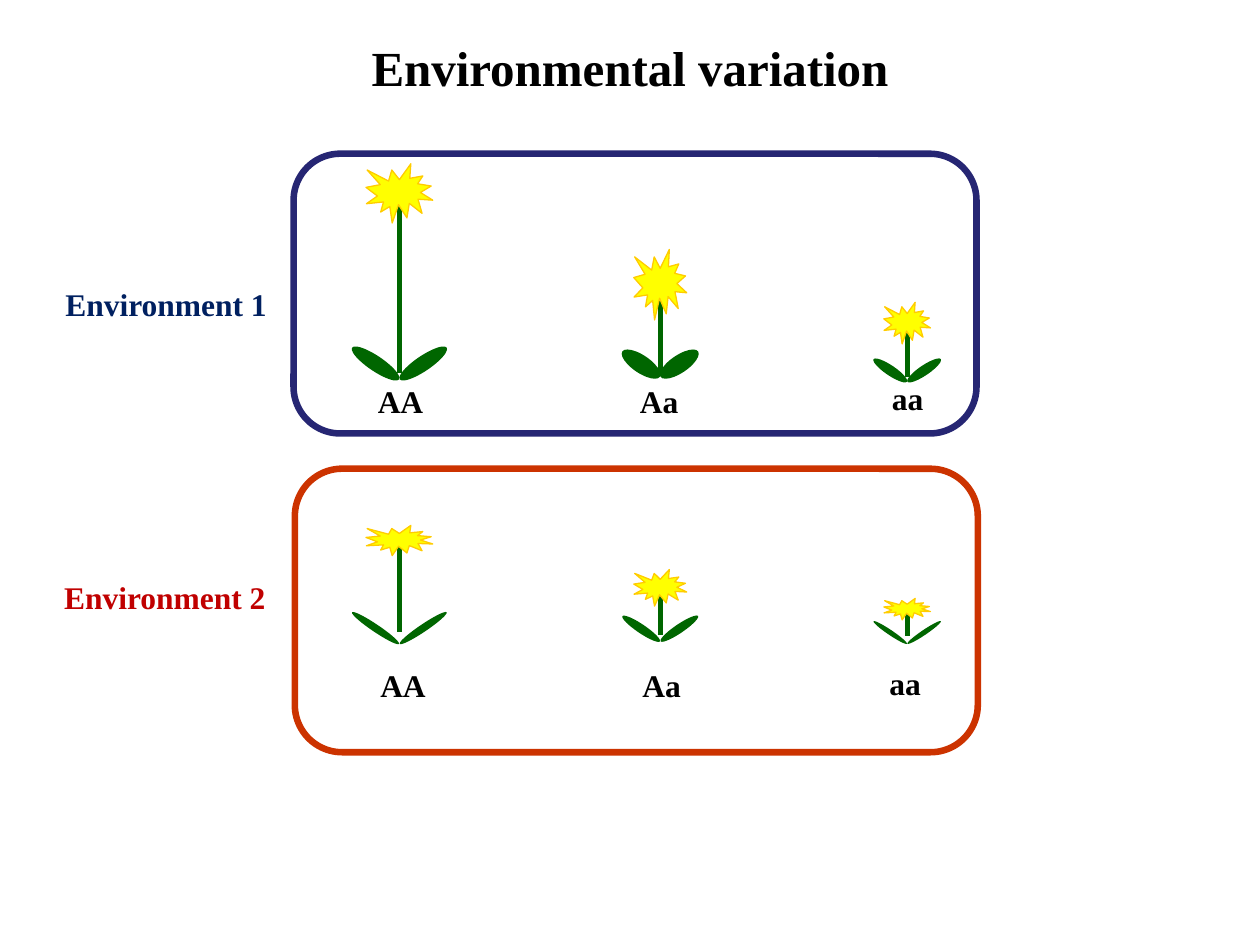
from dataclasses import dataclass

import pptx
import pptx.dml.color
import pptx.enum.shapes
import pptx.enum.text
import pptx.oxml.ns
import pptx.util
from lxml import etree
from pptx.util import Inches

FONT = "Times New Roman"
BLACK = "000000"
GREEN = "006600"
LEAF_TILT = 56
LEAF_SPREAD = 0.42  # offset of a leaf's centre from the stem, per leaf length
Shape = pptx.enum.shapes.MSO_SHAPE


@dataclass
class Flower:
    center: float
    bloom_top: float
    bloom_width: float
    bloom_height: float
    stem_top: float
    stem_bottom: float
    leaf_top: float
    leaf_width: float
    leaf_length: float


@dataclass
class Label:
    text: str
    left: float
    top: float
    width: float
    color: str = BLACK


@dataclass
class Environment:
    label: Label
    frame: tuple[float, float, float, float]
    frame_color: str
    flowers: list[Flower]
    genotypes: list[Label]


ENVIRONMENTS = [
    Environment(
        Label("Environment 1", 0.42, 2.21, 1.82, "002060"),
        (2.33, 1.22, 5.42, 2.22), "262673",
        [
            Flower(3.17, 1.3, 0.53, 0.47, 1.58, 2.96, 2.66, 0.12, 0.45),
            Flower(7.2, 2.4, 0.37, 0.33, 2.61, 2.99, 2.78, 0.08, 0.32),
            Flower(5.24, 1.98, 0.42, 0.56, 2.34, 2.98, 2.71, 0.14, 0.36),
        ],
        [
            Label("AA", 2.9, 2.98, 0.57),
            Label("Aa", 4.98, 2.98, 0.51),
            Label("aa", 6.98, 2.96, 0.45),
        ],
    ),
    Environment(
        Label("Environment 2", 0.41, 4.54, 1.82, "C00000"),
        (2.34, 3.72, 5.42, 2.25), "CC3300",
        [
            Flower(3.17, 4.17, 0.53, 0.24, 4.31, 5.02, 4.76, 0.06, 0.45),
            Flower(7.2, 4.75, 0.37, 0.17, 4.86, 5.05, 4.86, 0.04, 0.32),
            Flower(5.24, 4.52, 0.42, 0.29, 4.71, 5.04, 4.81, 0.07, 0.36),
        ],
        [
            Label("AA", 2.92, 5.24, 0.57),
            Label("Aa", 5.0, 5.24, 0.51),
            Label("aa", 6.96, 5.22, 0.45),
        ],
    ),
]


def rgb(color: str) -> pptx.dml.color.RGBColor:
    return pptx.dml.color.RGBColor.from_string(color)


def add_text(slide, label: Label, size: int = 18, height: float = 0.4):
    box = slide.shapes.add_textbox(
        Inches(label.left), Inches(label.top), Inches(label.width), Inches(height)
    )
    box.text_frame.word_wrap = False
    box.text_frame.auto_size = pptx.enum.text.MSO_AUTO_SIZE.SHAPE_TO_FIT_TEXT
    paragraph = box.text_frame.paragraphs[0]
    paragraph.text = label.text
    paragraph.font.name = FONT
    paragraph.font.size = pptx.util.Pt(size)
    paragraph.font.bold = True
    paragraph.font.color.rgb = rgb(label.color)
    return box


def add_preset(shapes, preset, bounds, fill=None, line=None, line_width=0.75):
    """Add a preset shape; a fill or line of None is left out."""
    shape = shapes.add_shape(preset, *map(Inches, bounds))
    shape.shadow.inherit = False
    if fill:
        shape.fill.solid()
        shape.fill.fore_color.rgb = rgb(fill)
    else:
        shape.fill.background()
    if line:
        shape.line.color.rgb = rgb(line)
        shape.line.width = pptx.util.Pt(line_width)
    else:
        shape.line.fill.background()
    return shape


def add_flower(slide, flower: Flower) -> None:
    shapes = slide.shapes.add_group_shape().shapes
    for side in (-1, 1):
        leaf_center = flower.center + side * LEAF_SPREAD * flower.leaf_length
        leaf = add_preset(
            shapes, Shape.OVAL,
            (leaf_center - flower.leaf_width / 2, flower.leaf_top,
             flower.leaf_width, flower.leaf_length),
            fill=GREEN,
        )
        leaf.rotation = side * LEAF_TILT % 360

    stem = shapes.add_connector(
        pptx.enum.shapes.MSO_CONNECTOR.STRAIGHT,
        Inches(flower.center), Inches(flower.stem_top),
        Inches(flower.center), Inches(flower.stem_bottom),
    )
    stem.line.color.rgb = rgb(GREEN)
    stem.line.width = pptx.util.Pt(3)
    etree.SubElement(stem._element.spPr, pptx.oxml.ns.qn("a:effectLst"))

    add_preset(
        shapes, Shape.EXPLOSION1,
        (flower.center - flower.bloom_width / 2, flower.bloom_top,
         flower.bloom_width, flower.bloom_height),
        fill="FFFF00", line="FFCC00",
    )


def add_environment(slide, environment: Environment) -> None:
    for flower in environment.flowers:
        add_flower(slide, flower)
    for genotype in environment.genotypes:
        add_text(slide, genotype)
    add_preset(slide.shapes, Shape.ROUNDED_RECTANGLE, environment.frame,
               line=environment.frame_color, line_width=3.75)
    add_text(slide, environment.label)


def main() -> None:
    presentation = pptx.Presentation()
    presentation.slide_width = Inches(10)
    presentation.slide_height = Inches(7.5)
    slide = presentation.slides.add_slide(presentation.slide_layouts[6])

    title = add_text(slide, Label("Environmental variation", 0, 0.25, 10), 28, 0.57)
    title.text_frame.word_wrap = True
    title.text_frame.paragraphs[0].alignment = pptx.enum.text.PP_ALIGN.CENTER

    for environment in ENVIRONMENTS:
        add_environment(slide, environment)
    presentation.save("out.pptx")


if __name__ == "__main__":
    main()
